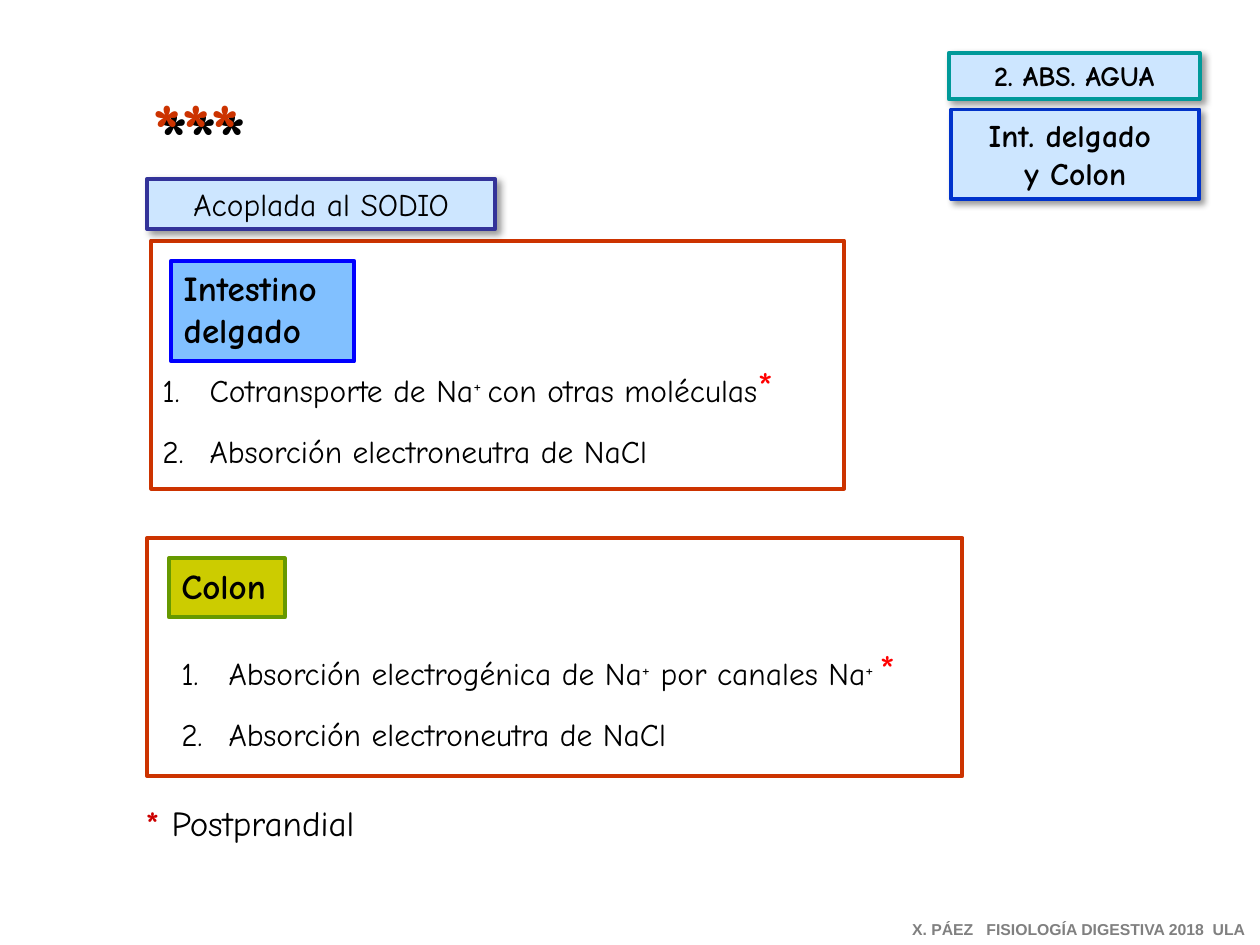
from lxml import etree
from pptx import Presentation
from pptx.dml.color import RGBColor
from pptx.enum.shapes import MSO_SHAPE
from pptx.enum.text import MSO_ANCHOR, PP_ALIGN
from pptx.oxml import parse_xml
from pptx.oxml.ns import qn
from pptx.util import Pt

BLACK = RGBColor(0, 0, 0)
RED = RGBColor(0xFF, 0, 0)
DARK_RED = RGBColor(0xCC, 0, 0)
RUST = RGBColor(0xCC, 0x33, 0)
GRAY = RGBColor(0x80, 0x80, 0x80)
PALE_BLUE = RGBColor(0xCD, 0xE6, 0xFF)
SKY = RGBColor(0x81, 0xC0, 0xFF)
OLIVE = RGBColor(0xCC, 0xCC, 0)
GREEN = RGBColor(0x66, 0x99, 0)
TEAL = RGBColor(0, 0x99, 0x99)
BLUE = RGBColor(0, 0, 0xFF)
ROYAL = RGBColor(0, 0x33, 0xCC)
INDIGO = RGBColor(0x33, 0x33, 0x99)

prs = Presentation()
prs.slide_width, prs.slide_height = Pt(720), Pt(540)
s = prs.slides.add_slide(prs.slide_layouts[6])


def add_box(at, paragraphs=(), fill=None, line=None, align=PP_ALIGN.LEFT, wrap=False, font="Comic Neue"):
    """Add a box; each paragraph is a list of (text, size, colour, bold, baseline) runs."""
    left, top, width, height = map(Pt, at)
    if line is None:
        sp = s.shapes.add_textbox(left, top, width, height)
    else:
        sp = s.shapes.add_shape(MSO_SHAPE.RECTANGLE, left, top, width, height)
        sp.shadow.inherit = False
        sp.line.color.rgb = line
        sp.line.width = Pt(2.25)
        if fill is None:
            sp.fill.background()
        else:
            sp.fill.solid()
            sp.fill.fore_color.rgb = fill
    tf = sp.text_frame
    tf.word_wrap = wrap
    tf.vertical_anchor = MSO_ANCHOR.TOP
    for i, runs in enumerate(paragraphs):
        p = tf.paragraphs[0] if i == 0 else tf.add_paragraph()
        p.alignment = align
        for text, size, color, bold, baseline in runs:
            r = p.add_run()
            r.text = text
            r.font.name = font
            r.font.size = Pt(size)
            r.font.bold = bold
            r.font.color.rgb = color
            if baseline:
                r.font._element.set("baseline", str(baseline * 1000))
    return sp


def add_shadow(sp, blur, dist, alpha):
    """Cast a black shadow towards the lower right."""
    sp.shadow.inherit = False
    effects = sp._element.spPr.find(qn("a:effectLst"))
    effects.append(parse_xml(
        '<a:outerShdw xmlns:a="http://schemas.openxmlformats.org/drawingml/2006/main"'
        f' blurRad="{Pt(blur)}" dist="{Pt(dist)}" dir="2700000" algn="tl" rotWithShape="0">'
        f'<a:srgbClr val="000000"><a:alpha val="{alpha * 1000}"/></a:srgbClr></a:outerShdw>'))


# Section frames
for at in [(86.4, 137.5, 396, 141.8), (84.2, 307.4, 465.8, 136.1)]:
    add_box(at, line=RUST)

# Shadowed headings
headings = [
    ((84.2, 102.2, 198.7, 28.8), ["Acoplada al SODIO"], 18, False, INDIGO),
    ((543.6, 62.6, 141.8, 51.1), ["Int. delgado ", "y Colon"], 18, True, ROYAL),
    ((542.2, 30.2, 143.3, 26.6), ["2. ABS. AGUA"], 16, True, TEAL),
]
for at, lines, size, bold, line in headings:
    sp = add_box(at, [[(text, size, BLACK, bold, 0)] for text in lines],
                 PALE_BLUE, line, PP_ALIGN.CENTER, wrap=True)
    add_shadow(sp, 4, 3, 40)

# Section labels
for at, lines, fill, line in [
    ((97.9, 149, 104.4, 57.6), ["Intestino", "delgado"], SKY, BLUE),
    ((96.5, 319, 66.2, 33.8), ["Colon"], OLIVE, GREEN),
]:
    add_box(at, [[(text, 20, BLACK, True, 0)] for text in lines], fill, line)

# Numbered mechanisms
star = ("*", 24, RED, False, 0)
neutral = [("Absorción electroneutra de NaCl", 18, BLACK, False, 0)]
cotransport = [
    ("Cotransporte de Na", 18, BLACK, False, 0),
    ("+ ", 18, BLACK, False, 30),
    ("con otras moléculas", 18, BLACK, False, 0),
    star,
]
electrogenic = [
    ("Absorción electrogénica de Na", 18, BLACK, False, 0),
    ("+", 18, BLACK, False, 30),
    (" por canales Na", 18, BLACK, False, 0),
    ("+ ", 18, BLACK, False, 30),
    star,
]
for at, first in [((85.7, 202.3, 398.2, 70.6), cotransport),
                  ((96.5, 364.3, 454.3, 69.8), electrogenic)]:
    sp = add_box(at, [first, neutral])
    for p in sp.text_frame.paragraphs:
        pPr = p._p.get_or_add_pPr()
        pPr.set("marL", str(Pt(27)))
        pPr.set("indent", str(Pt(-27)))
        etree.SubElement(pPr, qn("a:buFont"), typeface="+mj-lt")
        etree.SubElement(pPr, qn("a:buAutoNum"), type="arabicPeriod")
    sp.text_frame.paragraphs[1].space_before = Pt(12)

# Title stars, footnote and footer
stars = add_box((79.9, 43.2, 84.2, 59.8), [[("***", 44, RUST, True, 0)]])
add_shadow(stars, 0, 6, 100)
add_box((76.3, 454.3, 146.9, 31.7),
        [[("* ", 20, DARK_RED, True, 0), ("Postprandial", 20, BLACK, False, 0)]])
add_box((514.1, 522, 205.9, 18),
        [[("X. PÁEZ   FISIOLOGÍA DIGESTIVA 2018  ULA", 9, GRAY, True, 0)]], font="Arial")

prs.save("out.pptx")
